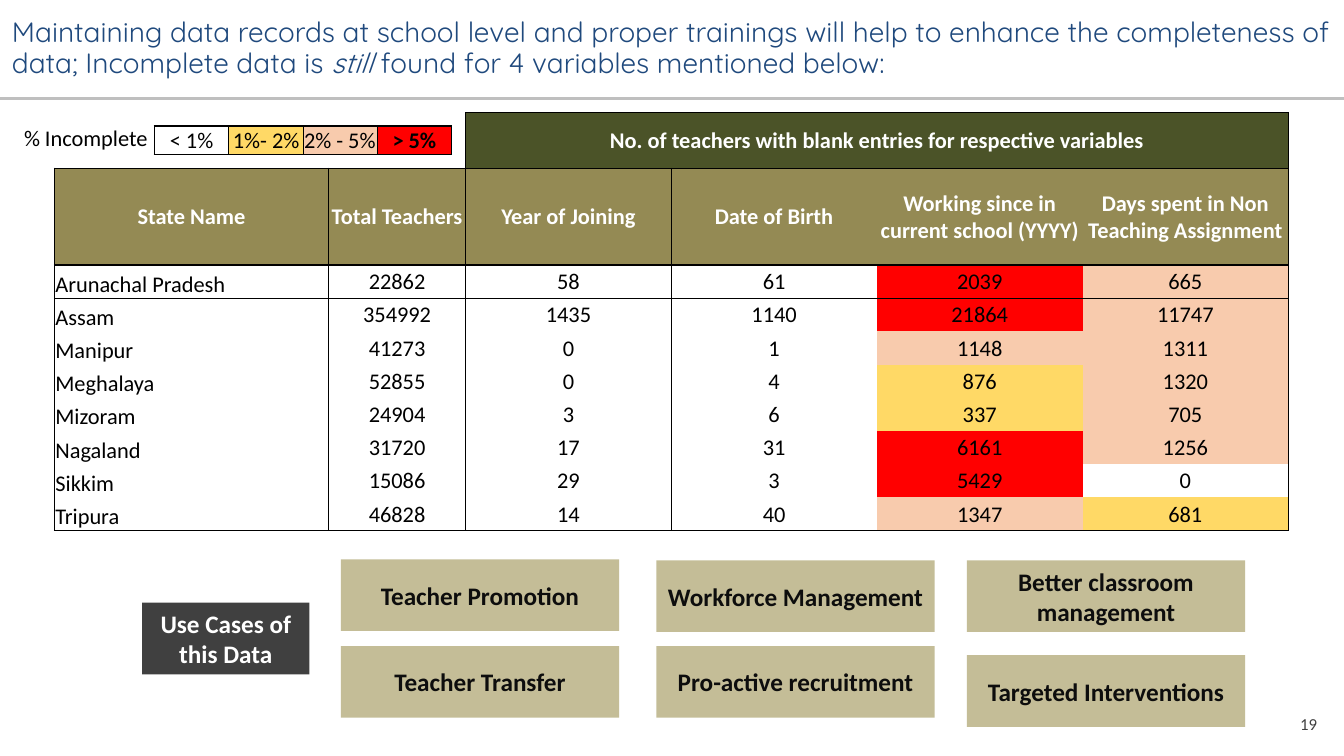
from dataclasses import dataclass

from lxml import etree
from pptx import Presentation
from pptx.dml.color import RGBColor
from pptx.enum.shapes import MSO_CONNECTOR, MSO_SHAPE
from pptx.enum.text import MSO_ANCHOR, PP_ALIGN
from pptx.oxml.ns import qn
from pptx.util import Inches, Pt

RECTANGLE = MSO_SHAPE.RECTANGLE
STRAIGHT = MSO_CONNECTOR.STRAIGHT
MIDDLE, BOTTOM, TOP = MSO_ANCHOR.MIDDLE, MSO_ANCHOR.BOTTOM, MSO_ANCHOR.TOP
LEFT, CENTER, RIGHT = PP_ALIGN.LEFT, PP_ALIGN.CENTER, PP_ALIGN.RIGHT

SLIDE_WIDTH, SLIDE_HEIGHT = Inches(13.33), Inches(7.5)
PLAIN_TABLE_STYLE = "{2D5ABB26-0587-4C30-8999-92F81FD0307C}"


@dataclass(frozen=True)
class Theme:
    title_font: str = "Quicksand"
    body_font: str = "Calibri"
    title_size: int = 20
    card_size: int = 18
    table_size: int = 16
    number_size: int = 12
    title: str = "1F497D"
    rule: str = "BFBFBF"
    white: str = "FFFFFF"
    black: str = "000000"
    dark: str = "404040"
    card: str = "C4BD97"
    card_text: str = "0D0D0D"
    banner: str = "4B5328"
    header: str = "948A54"


@dataclass(frozen=True)
class Box:
    """A rectangle in percent of the slide's width and height."""
    left: float
    top: float
    width: float
    height: float

    def lengths(self) -> tuple:
        return (across(self.left), down(self.top), across(self.width), down(self.height))


@dataclass(frozen=True)
class Card:
    text: str
    box: Box
    fill: str
    color: str


@dataclass(frozen=True)
class Level:
    label: str
    minimum: float
    fill: str
    bold: bool = False


@dataclass(frozen=True)
class State:
    name: str
    teachers: int
    blanks: tuple


THEME = Theme()
LEVELS = (Level("< 1%", 0, THEME.white), Level("1%- 2%", 1, "FFD966"),
          Level("2% - 5%", 2, "F8CBAD"), Level("> 5%", 5, "FF0000", True))
HEADERS = ("State Name", "Total Teachers", "Year of Joining", "Date of Birth",
           "Working since in current school (YYYY)", "Days spent in Non Teaching Assignment")
STATES = (
    State("Arunachal Pradesh", 22862, (58, 61, 2039, 665)),
    State("Assam", 354992, (1435, 1140, 21864, 11747)),
    State("Manipur", 41273, (0, 1, 1148, 1311)),
    State("Meghalaya", 52855, (0, 4, 876, 1320)),
    State("Mizoram", 24904, (3, 6, 337, 705)),
    State("Nagaland", 31720, (17, 31, 6161, 1256)),
    State("Sikkim", 15086, (29, 3, 5429, 0)),
    State("Tripura", 46828, (14, 40, 1347, 681)),
)
COLUMN_WIDTHS = (20.4, 10.2) + (15.3,) * 4
ROW_HEIGHTS = (7.33, 12.8) + (4.39,) * len(STATES)
LAST_ROW, LAST_COLUMN = len(ROW_HEIGHTS) - 1, len(COLUMN_WIDTHS) - 1
CARD_WIDTH, CARD_HEIGHT = 20.71, 9.47
USE_CASES = (
    (25.36, ((74.0, "Teacher Promotion"), (85.47, "Teacher Transfer"))),
    (48.84, ((74.13, "Workforce Management"), (85.47, "Pro-active recruitment"))),
    (71.94, ((74.13, "Better classroom management"), (86.67, "Targeted Interventions"))),
)


def across(percent: float) -> int:
    return round(SLIDE_WIDTH * percent / 100)


def down(percent: float) -> int:
    return round(SLIDE_HEIGHT * percent / 100)


def style_run(run, size: int, color: str, bold: bool = False, font: str = THEME.body_font) -> None:
    run.font.name, run.font.size, run.font.bold = font, Pt(size), bold
    run.font.color.rgb = RGBColor.from_string(color)


def write(frame, text: str, size: int, color: str, bold: bool = False, align=CENTER) -> None:
    frame.text = text
    paragraph = frame.paragraphs[0]
    paragraph.alignment = align
    style_run(paragraph.runs[0], size, color, bold)


def paint(owner, color: str) -> None:
    owner.fill.solid()
    owner.fill.fore_color.rgb = RGBColor.from_string(color)


def add_text_box(slide, box: Box, anchor):
    shape = slide.shapes.add_textbox(*box.lengths())
    shape.text_frame.word_wrap = True
    shape.text_frame.vertical_anchor = anchor
    return shape


def add_rule(slide, top: float) -> None:
    line = slide.shapes.add_connector(STRAIGHT, 0, down(top), SLIDE_WIDTH, down(top))
    line.line.color.rgb = RGBColor.from_string(THEME.rule)
    line.line.width = Pt(1.5)
    etree.SubElement(line._element.spPr, qn("a:effectLst"))


def add_card(slide, card: Card) -> None:
    shape = slide.shapes.add_shape(RECTANGLE, *card.box.lengths())
    shape.shadow.inherit = False
    shape.line.fill.background()
    paint(shape, card.fill)
    shape.text_frame.word_wrap = True
    shape.text_frame.vertical_anchor = MIDDLE
    write(shape.text_frame, card.text, THEME.card_size, card.color, True)


def add_plain_table(slide, left: float, top: float, widths: tuple, heights: tuple):
    box = Box(left, top, sum(widths), sum(heights))
    table = slide.shapes.add_table(len(heights), len(widths), *box.lengths()).table
    table.first_row = table.horz_banding = False
    table._tbl.tblPr.find(qn("a:tableStyleId")).text = PLAIN_TABLE_STYLE
    for column, width in zip(table.columns, widths):
        column.width = across(width)
    for row, height in zip(table.rows, heights):
        row.height = down(height)
    return table


def set_borders(cell, sides: str) -> None:
    properties = cell._tc.get_or_add_tcPr()
    for index, side in enumerate(side for side in "LRTB" if side in sides):
        line = etree.Element(qn(f"a:ln{side}"), w=str(Pt(1)))
        fill = etree.SubElement(line, qn("a:solidFill"))
        etree.SubElement(fill, qn("a:srgbClr"), val=THEME.black)
        properties.insert(index, line)


def fill_cell(cell, text: str, fill: str = "", color: str = THEME.black, bold: bool = False,
              align=CENTER, anchor=MIDDLE) -> None:
    cell.margin_left = cell.margin_right = cell.margin_top = Inches(0.01)
    cell.margin_bottom = 0
    cell.vertical_anchor = anchor
    write(cell.text_frame, text, THEME.table_size, color, bold, align)
    if fill:
        paint(cell, fill)


def border_sides(row: int, column: int) -> str:
    if row == 0:
        return "B" if column < 2 else "LRTB" if column == 2 else "TB"
    return "".join((
        "L" if column <= 2 else "",
        "R" if column < 2 or column == LAST_COLUMN else "",
        "T" if row <= 2 else "",
        "B" if row in (1, LAST_ROW) else "",
    ))


def level_fill(blank: int, teachers: int) -> str:
    share = 100 * blank / teachers
    return [level.fill for level in LEVELS if share >= level.minimum][-1]


def add_state_table(slide) -> None:
    table = add_plain_table(slide, 4.05, 14.93, COLUMN_WIDTHS, ROW_HEIGHTS)
    table.cell(0, 2).merge(table.cell(0, LAST_COLUMN))
    fill_cell(table.cell(0, 2), "No. of teachers with blank entries for respective variables",
              THEME.banner, THEME.white, True)
    for column, header in enumerate(HEADERS):
        fill_cell(table.cell(1, column), header, THEME.header, THEME.white, True)
    for row, state in enumerate(STATES, start=2):
        fill_cell(table.cell(row, 0), state.name, align=LEFT, anchor=BOTTOM)
        fill_cell(table.cell(row, 1), str(state.teachers))
        for column, blank in enumerate(state.blanks, start=2):
            fill_cell(table.cell(row, column), str(blank), level_fill(blank, state.teachers))
    for row in range(LAST_ROW + 1):
        for column in range(LAST_COLUMN + 1):
            set_borders(table.cell(row, column), border_sides(row, column))


def add_legend(slide) -> None:
    for left, levels in ((22.51, LEVELS[2:]), (11.48, LEVELS[:2])):
        table = add_plain_table(slide, left, 16.67, (5.55, 5.55), (3.73,))
        for column, level in enumerate(levels):
            fill_cell(table.cell(0, column), level.label, level.fill, bold=level.bold)
            set_borders(table.cell(0, column), "LRTB")
    label = add_text_box(slide, Box(1.05, 15.73, 10.88, 4.93), TOP)
    write(label.text_frame, "% Incomplete", THEME.table_size, THEME.black, align=LEFT)


def add_title(slide) -> None:
    title = add_text_box(slide, Box(0.15, 0.13, 99.85, 12.67), MIDDLE)
    paint(title, THEME.white)
    paragraph = title.text_frame.paragraphs[0]
    paragraph.line_spacing = 0.9
    for text, italic in (
        ("Maintaining data records at school level and proper trainings will help to enhance "
         "the completeness of data; Incomplete data is ", False),
        ("still ", True),
        ("found for 4 variables mentioned below:", False),
    ):
        run = paragraph.add_run()
        run.text = text
        style_run(run, THEME.title_size, THEME.title, font=THEME.title_font)
        run.font.italic = italic


def main() -> None:
    presentation = Presentation()
    presentation.slide_width, presentation.slide_height = SLIDE_WIDTH, SLIDE_HEIGHT
    slide = presentation.slides.add_slide(presentation.slide_layouts[6])

    # Heading and page number
    for top in (12.93, 13.07):
        add_rule(slide, top)
    add_title(slide)
    number = add_text_box(slide, Box(76.22, 93.07, 22.51, 5.33), MIDDLE)
    write(number.text_frame, "19", THEME.number_size, THEME.dark, align=RIGHT)

    # Data and its colour key
    add_state_table(slide)
    add_legend(slide)

    # Use cases
    add_card(slide, Card("Use Cases of this Data", Box(10.58, 79.73, 12.45, CARD_HEIGHT),
                         THEME.dark, THEME.white))
    for left, cards in USE_CASES:
        for top, text in cards:
            add_card(slide, Card(text, Box(left, top, CARD_WIDTH, CARD_HEIGHT),
                                 THEME.card, THEME.card_text))
    presentation.save("out.pptx")


if __name__ == "__main__":
    main()
